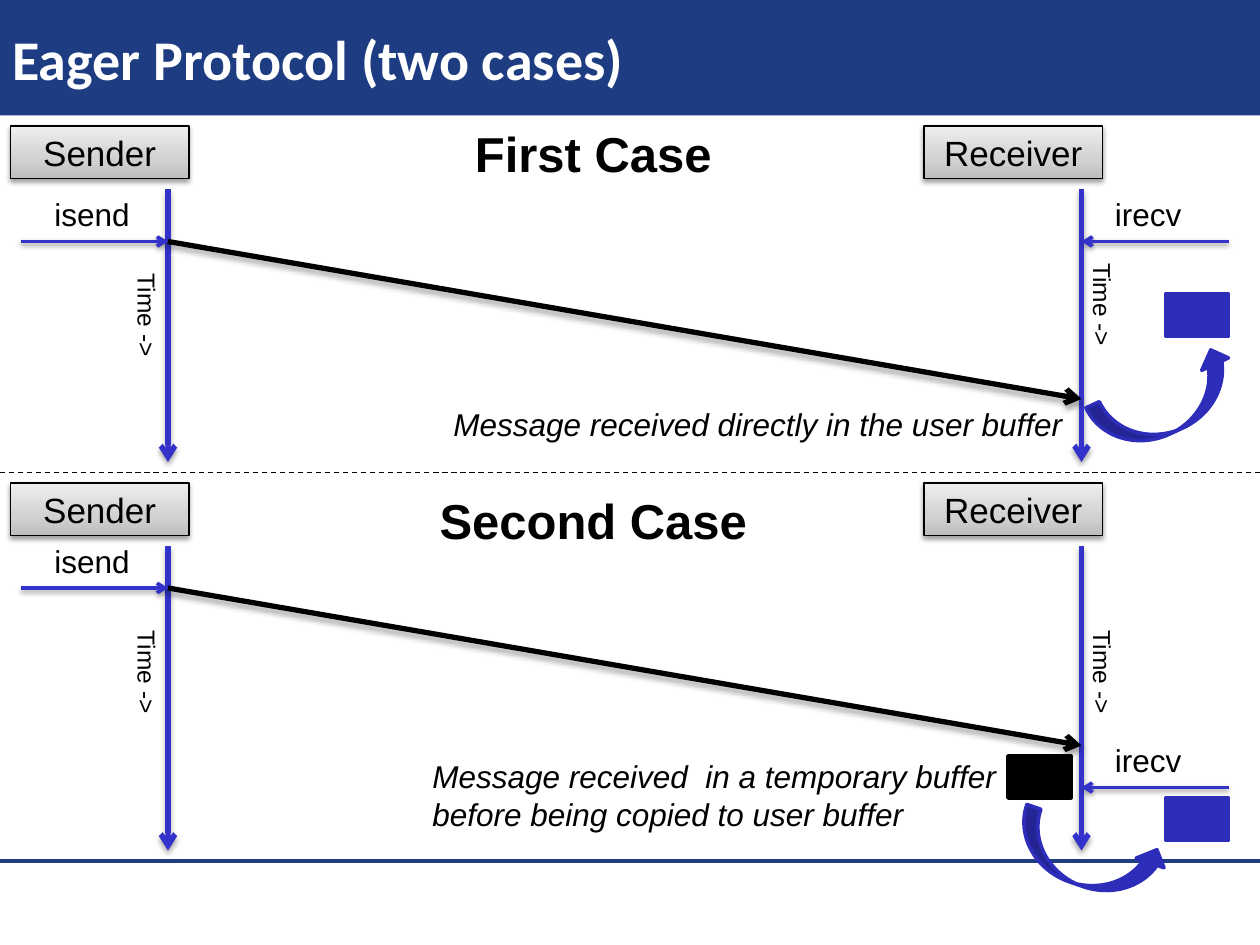
from dataclasses import dataclass

import lxml.etree
import pptx
import pptx.dml.color
import pptx.enum.dml
import pptx.enum.shapes
import pptx.enum.text
import pptx.oxml.ns
import pptx.util

Pt = pptx.util.Pt
SHAPE = pptx.enum.shapes.MSO_SHAPE
ALIGN = pptx.enum.text.PP_ALIGN
ANCHOR = pptx.enum.text.MSO_ANCHOR


@dataclass(frozen=True)
class Theme:
    navy: str = "1E3C82"
    blue: str = "3333CC"
    buffer: str = "2D2DB9"
    black: str = "000000"
    white: str = "FFFFFF"
    gradient: tuple = ((0, "BDBDBD"), (35, "D1D1D1"), (100, "EEEEEE"))
    title_font: str = "Calibri"
    body_font: str = "Arial"
    title: int = 32
    heading: int = 28
    process: int = 20
    label: int = 18
    time: int = 14


@dataclass(frozen=True)
class Case:
    heading: str
    heading_top: float
    process_top: float
    timeline_end: float
    isend_y: float
    irecv_y: float
    sender_time_top: float
    receiver_time_top: float
    message: str
    message_box: tuple
    user_buffer_top: float
    copy_arrow: tuple
    copy_rotation: float


THEME = Theme()
SENDER_X, RECEIVER_X = 96, 618
CASES = (
    Case("First Case", 67, 72, 264, 138, 138, 168, 162,
         "Message received directly in the user buffer",
         (252, 228, 372, 29), 168, (650.2, 186.5, 33.8, 87.1), 245.1),
    Case("Second Case", 276.5, 276, 486, 336, 450, 372, 372,
         "Message received  in a temporary buffer before being copied to user buffer",
         (240, 429, 372, 51), 456, (605.5, 446.4, 33.8, 87.1), 289.2),
)


def rgb(color):
    return pptx.dml.color.RGBColor.from_string(color)


def add_xml(parent, tag, **attributes):
    element = lxml.etree.SubElement(parent, pptx.oxml.ns.qn(tag))
    for key, value in attributes.items():
        element.set(key, str(value))
    return element


def add_shadow(effects, opacity, distance):
    shadow = add_xml(effects, "a:outerShdw", blurRad=int(Pt(3.1)), dist=int(Pt(distance)),
                     dir=5400000, rotWithShape=0)
    tone = add_xml(shadow, "a:srgbClr", val=THEME.black)
    add_xml(tone, "a:alpha", val=opacity * 1000)


def write(frame, text, size, color=THEME.black, font=THEME.body_font,
          align=ALIGN.LEFT, bold=False, italic=False):
    frame.word_wrap = True
    paragraph = frame.paragraphs[0]
    paragraph.alignment = align
    run = paragraph.add_run()
    run.text = text
    run.font.name = font
    run.font.size = Pt(size)
    run.font.bold = bold
    run.font.italic = italic
    run.font.color.rgb = rgb(color)


def add_label(slide, box, text, size, rotation=0, **style):
    label = slide.shapes.add_textbox(*map(Pt, box))
    label.rotation = rotation
    write(label.text_frame, text, size, **style)
    label.text_frame.auto_size = pptx.enum.text.MSO_AUTO_SIZE.SHAPE_TO_FIT_TEXT


def add_solid(slide, kind, box, color, line_width=2):
    solid = slide.shapes.add_shape(kind, *map(Pt, box))
    solid.shadow.inherit = False
    solid.fill.solid()
    solid.fill.fore_color.rgb = rgb(color)
    if line_width:
        solid.line.color.rgb = rgb(color)
        solid.line.width = Pt(line_width)
    else:
        solid.line.fill.background()
    return solid


def add_line(slide, start, end, color, width, arrow=False, dashed=False, shadow=None):
    line = slide.shapes.add_connector(pptx.enum.shapes.MSO_CONNECTOR.STRAIGHT,
                                      *map(Pt, (*start, *end)))
    line.line.color.rgb = rgb(color)
    line.line.width = Pt(width)
    if dashed:
        line.line.dash_style = pptx.enum.dml.MSO_LINE.DASH
    properties = line._element.spPr
    if arrow:
        add_xml(properties.find(pptx.oxml.ns.qn("a:ln")), "a:tailEnd", type="arrow")
    effects = add_xml(properties, "a:effectLst")
    if shadow:
        add_shadow(effects, *shadow)


def add_process(slide, left, top, name):
    process = slide.shapes.add_shape(SHAPE.RECTANGLE, Pt(left), Pt(top), Pt(102), Pt(30))
    process.shadow.inherit = False
    process.fill.gradient()
    process.fill.gradient_angle = 90
    properties = process._element.spPr
    stops = properties.find(".//" + pptx.oxml.ns.qn("a:gsLst"))
    for stop in list(stops):
        stops.remove(stop)
    for position, color in THEME.gradient:
        stop = add_xml(stops, "a:gs", pos=position * 1000)
        add_xml(stop, "a:srgbClr", val=color)
    process.line.color.rgb = rgb(THEME.black)
    process.line.width = Pt(0.75)
    add_shadow(properties.find(pptx.oxml.ns.qn("a:effectLst")), 38, 1.6)
    process.text_frame.vertical_anchor = ANCHOR.MIDDLE
    write(process.text_frame, name, THEME.process, align=ALIGN.CENTER)


def add_copy_arrow(slide, box, rotation):
    arrow = add_solid(slide, SHAPE.CURVED_LEFT_ARROW, box, THEME.buffer)
    arrow.rotation = rotation
    arrow._element.spPr.find(pptx.oxml.ns.qn("a:xfrm")).set("flipH", "1")


def add_call(slide, name, label_left, outer_x, timeline_x, y):
    add_line(slide, (outer_x, y), (timeline_x, y), THEME.blue, 2,
             arrow=True, shadow=(38, 1.6))
    add_label(slide, (label_left, y - 30, 78, 29), name, THEME.label)


def add_case(slide, case):
    for name, x, process_left, time_left, time_top in (
            ("Sender", SENDER_X, 6, -6, case.sender_time_top),
            ("Receiver", RECEIVER_X, 528, 540, case.receiver_time_top)):
        add_line(slide, (x, case.process_top + 36), (x, case.timeline_end),
                 THEME.blue, 3, arrow=True, shadow=(35, 1.8))
        add_process(slide, process_left, case.process_top, name)
        add_label(slide, (time_left, time_top, 180, 24.2), "Time ->", THEME.time,
                  rotation=90, align=ALIGN.CENTER)
    add_call(slide, "isend", 24, 12, SENDER_X, case.isend_y)
    add_line(slide, (SENDER_X, case.isend_y), (RECEIVER_X, case.isend_y + 90),
             THEME.black, 3, arrow=True, shadow=(35, 1.8))
    add_call(slide, "irecv", 630, 702, RECEIVER_X, case.irecv_y)
    add_solid(slide, SHAPE.RECTANGLE, (666, case.user_buffer_top, 36, 24), THEME.buffer)
    add_copy_arrow(slide, case.copy_arrow, case.copy_rotation)
    add_label(slide, case.message_box, case.message, THEME.label, italic=True)
    add_label(slide, (204, case.heading_top, 270, 41), case.heading, THEME.heading,
              align=ALIGN.CENTER, bold=True)


def add_title(slide, text):
    banner = add_solid(slide, SHAPE.RECTANGLE, (0, 0, 720, 66), THEME.navy, line_width=0)
    banner.text_frame.vertical_anchor = ANCHOR.MIDDLE
    write(banner.text_frame, text, THEME.title, THEME.white, THEME.title_font, bold=True)


def main():
    deck = pptx.Presentation()
    deck.slide_width, deck.slide_height = Pt(720), Pt(540)
    slide = deck.slides.add_slide(deck.slide_layouts[6])
    add_line(slide, (0, 492), (720, 492), THEME.navy, 2)
    add_title(slide, "Eager Protocol (two cases)")
    add_line(slide, (0, 270), (720, 270), THEME.black, 0.75, dashed=True)
    for case in CASES:
        add_case(slide, case)
    add_solid(slide, SHAPE.RECTANGLE, (576, 432, 36, 24), THEME.black)
    deck.save("out.pptx")


if __name__ == "__main__":
    main()
